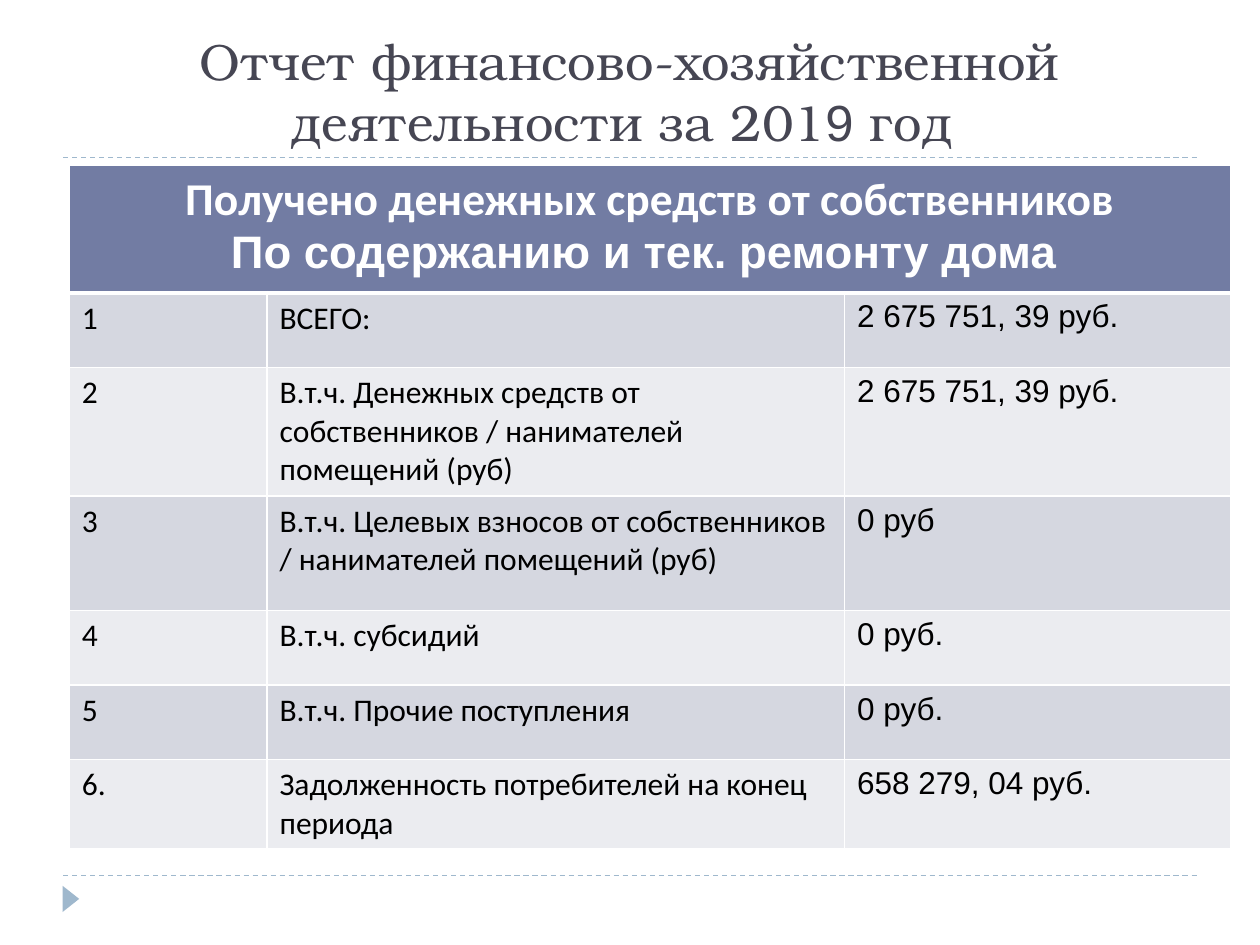
from lxml.etree import SubElement
from pptx import Presentation
from pptx.dml.color import RGBColor
from pptx.enum.dml import MSO_LINE
from pptx.enum.shapes import MSO_CONNECTOR, MSO_SHAPE
from pptx.enum.text import MSO_ANCHOR, PP_ALIGN
from pptx.oxml.ns import qn
from pptx.util import Pt

WHITE = RGBColor(0xFF, 0xFF, 0xFF)
BLACK = RGBColor(0x00, 0x00, 0x00)
TITLE = RGBColor(0x46, 0x46, 0x53)
ACCENT = RGBColor(0x9F, 0xB8, 0xCD)
HEADER = RGBColor(0x72, 0x7C, 0xA3)
BANDS = (RGBColor(0xD5, 0xD7, 0xE0), RGBColor(0xEB, 0xEC, 0xF0))

SERIF, SANS, BODY = "TeX Gyre Bonum", "Arial", "Calibri"

HEADING = (
    ("Получено денежных средств от собственников", BODY),
    ("По содержанию и тек. ремонту дома ", SANS),
)
ROWS = (
    ("1", "ВСЕГО:", "2 675 751, 39 руб."),
    ("2", "В.т.ч. Денежных средств от собственников / нанимателей помещений (руб)",
     "2 675 751, 39 руб."),
    ("3", "В.т.ч. Целевых взносов от собственников / нанимателей помещений (руб)", "0 руб"),
    ("4", "В.т.ч. субсидий", "0 руб."),
    ("5", "В.т.ч. Прочие поступления", "0 руб."),
    ("6.", "Задолженность потребителей на конец периода", "658 279, 04 руб."),
)
COL_WIDTHS = (113, 330, 221)
ROW_HEIGHTS = (73, 42.6, 73.5, 65.4, 42.6, 42.6, 51)


def add_run(p, text, font, size, color, bold=False):
    """Append one formatted run to a paragraph."""
    r = p.add_run()
    r.text = text
    r.font.name, r.font.size, r.font.bold = font, Pt(size), bold
    r.font.color.rgb = color


def add_rule(s, x, y, w):
    """Draw a dashed horizontal rule."""
    line = s.shapes.add_connector(MSO_CONNECTOR.STRAIGHT, Pt(x), Pt(y), Pt(x + w), Pt(y))
    line.line.color.rgb = ACCENT
    line.line.width = Pt(0.75)
    line.line.dash_style = MSO_LINE.DASH
    SubElement(line._element.spPr, qn("a:effectLst"))


def add_title(s, x, y, w, h):
    """Place the title with a rule along its bottom edge."""
    add_rule(s, x, y + h, w)
    tf = s.shapes.add_textbox(Pt(x), Pt(y), Pt(w), Pt(h)).text_frame
    tf.word_wrap = True
    tf.vertical_anchor = MSO_ANCHOR.BOTTOM
    p = tf.paragraphs[0]
    p.alignment = PP_ALIGN.CENTER
    for text, font in (("Отчет финансово-хозяйственной деятельности за 201", SERIF),
                       ("9", SANS), (" год ", SERIF)):
        add_run(p, text, font, 29, TITLE)


def add_footer(s, x, y, w):
    """Place the bottom rule and the arrow marker below it."""
    add_rule(s, x, y, w)
    sp = s.shapes.add_shape(MSO_SHAPE.ISOSCELES_TRIANGLE, Pt(x - 3), Pt(y + 8.5), Pt(15), Pt(9.5))
    sp.rotation = 90
    sp.shadow.inherit = False
    sp.fill.solid()
    sp.fill.fore_color.rgb = ACCENT
    sp.line.fill.background()


def style_cell(cell, fill, top=1, bottom=1):
    """Give a cell white borders and a solid fill."""
    tc_pr = cell._tc.get_or_add_tcPr()
    for side, width in (("L", 1), ("R", 1), ("T", top), ("B", bottom)):
        ln = SubElement(tc_pr, qn(f"a:ln{side}"), w=str(Pt(width)))
        SubElement(SubElement(ln, qn("a:solidFill")), qn("a:srgbClr"), val=str(WHITE))
    cell.fill.solid()
    cell.fill.fore_color.rgb = fill


def add_report(s, x, y):
    """Build the banded table of receipts under a merged heading."""
    table = s.shapes.add_table(len(ROW_HEIGHTS), len(COL_WIDTHS), Pt(x), Pt(y),
                               Pt(sum(COL_WIDTHS)), Pt(sum(ROW_HEIGHTS))).table
    for col, width in zip(table.columns, COL_WIDTHS):
        col.width = Pt(width)
    for row, height in zip(table.rows, ROW_HEIGHTS):
        row.height = Pt(height)

    head = table.cell(0, 0)
    head.merge(table.cell(0, len(COL_WIDTHS) - 1))
    for cell in table.rows[0].cells:
        style_cell(cell, HEADER, bottom=3)
    tf = head.text_frame
    for p, (text, font) in zip((tf.paragraphs[0], tf.add_paragraph()), HEADING):
        p.alignment = PP_ALIGN.CENTER
        add_run(p, text, font, 26, WHITE, bold=True)

    for i, values in enumerate(ROWS, 1):
        for j, (text, font) in enumerate(zip(values, (BODY, BODY, SANS))):
            cell = table.cell(i, j)
            style_cell(cell, BANDS[(i - 1) % 2], top=3 if i == 1 else 1)
            add_run(cell.text_frame.paragraphs[0], text, font, 18, BLACK)


def main():
    """Assemble the slide and save it."""
    prs = Presentation()
    prs.slide_width, prs.slide_height = Pt(720), Pt(540)
    s = prs.slides.add_slide(prs.slide_layouts[6])
    add_footer(s, 36, 500.4, 648)
    add_title(s, 36, 18, 648, 72)
    add_report(s, 39.6, 94.5)
    prs.save("out.pptx")


if __name__ == "__main__":
    main()
